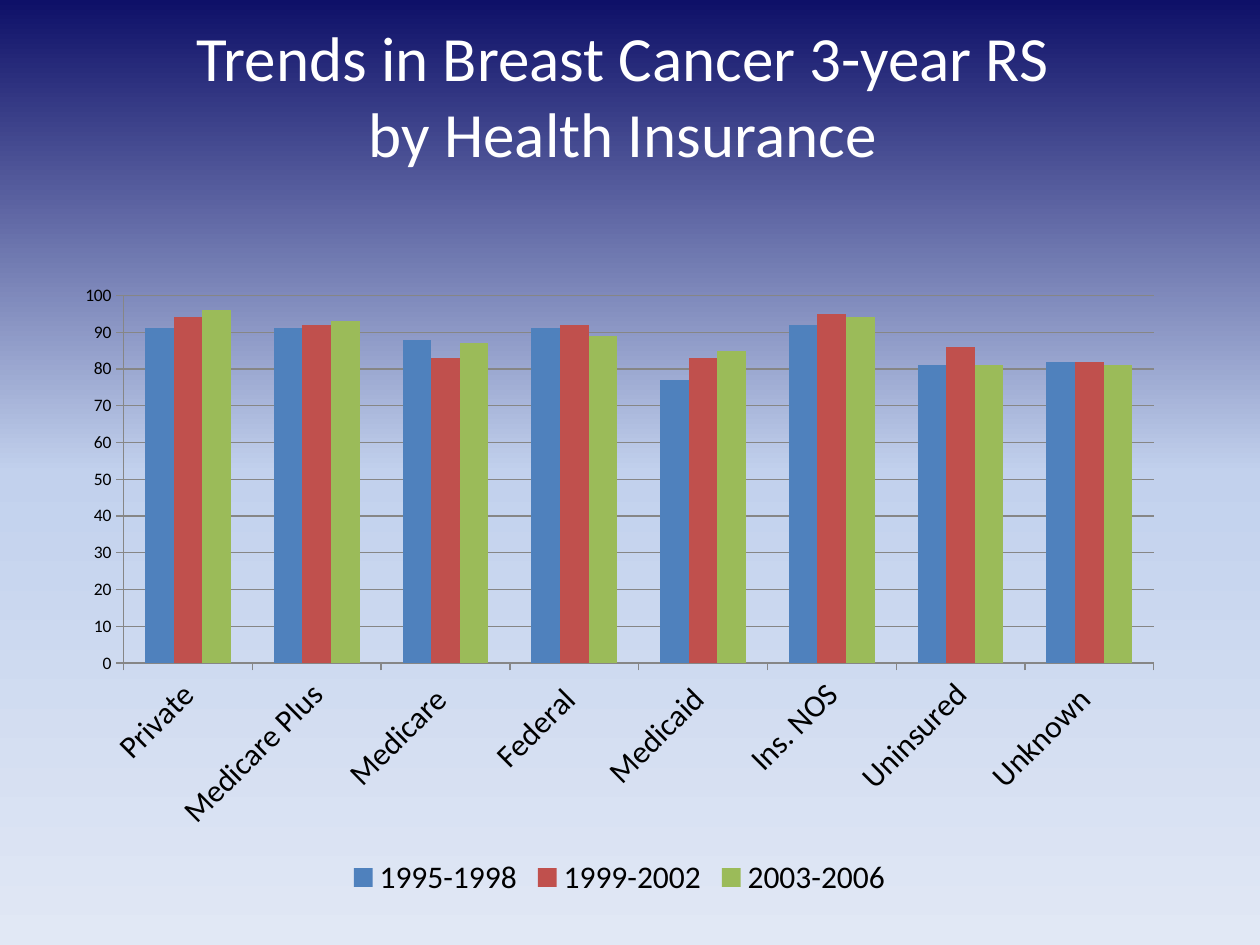
"""Build a slide charting breast cancer survival trends by health insurance."""
from copy import deepcopy

from pptx import Presentation
from pptx.chart.data import CategoryChartData as ChartData
from pptx.dml.color import RGBColor
from pptx.enum.chart import XL_CHART_TYPE as ChartType
from pptx.enum.chart import XL_LEGEND_POSITION as LegendPosition
from pptx.enum.chart import XL_TICK_MARK as TickMark
from pptx.enum.text import MSO_ANCHOR as Anchor
from pptx.enum.text import PP_ALIGN as Align
from pptx.util import Pt

WHITE = RGBColor(0xFF, 0xFF, 0xFF)
BLACK = RGBColor(0x00, 0x00, 0x00)
GRAY = RGBColor(0x86, 0x86, 0x86)
NAVY = RGBColor(0x0E, 0x10, 0x68)
SKY = RGBColor(0xC2, 0xD1, 0xED)
PALE = RGBColor(0xE1, 0xE8, 0xF5)
BLUE = RGBColor(0x4F, 0x81, 0xBD)
RED = RGBColor(0xC0, 0x50, 0x4D)
GREEN = RGBColor(0x9B, 0xBB, 0x59)

FONT = "Calibri"
WIDTH, HEIGHT = 720, 540
TITLE = ["Trends in Breast Cancer 3-year RS ", "by Health Insurance "]
BACKGROUND = [(0, NAVY), (0.5, SKY), (1, PALE)]
INSURANCE = ["Private", "Medicare Plus", "Medicare ", "Federal ",
             "Medicaid ", "Ins. NOS", "Uninsured", "Unknown "]
PERIODS = [
    ("1995-1998", BLUE, [91, 91, 88, 91, 77, 92, 81, 82]),
    ("1999-2002", RED, [94, 92, 83, 92, 83, 95, 86, 82]),
    ("2003-2006", GREEN, [96, 93, 87, 89, 85, 94, 81, 81]),
]


def style_font(font, size, color):
    font.name = FONT
    font.size = Pt(size)
    font.color.rgb = color


def paint_background(page):
    fill = page.background.fill
    fill.gradient()
    fill.gradient_angle = 270
    first = page.element.xpath(".//a:gs")[0]
    first.addnext(deepcopy(first))
    for stop, (position, color) in zip(fill.gradient_stops, BACKGROUND):
        stop.position = position
        stop.color.rgb = color


def add_title(page):
    box = page.shapes.add_textbox(0, 0, Pt(WIDTH), Pt(108))
    frame = box.text_frame
    frame.word_wrap = True
    frame.vertical_anchor = Anchor.MIDDLE
    para = frame.paragraphs[0]
    para.alignment = Align.CENTER
    for index, line in enumerate(TITLE):
        if index:
            para.add_line_break()
        span = para.add_run()
        span.text = line
        style_font(span.font, 36, WHITE)


def style_axis(axis, size):
    axis.major_tick_mark = TickMark.OUTSIDE
    axis.minor_tick_mark = TickMark.NONE
    axis.format.line.color.rgb = GRAY
    axis.format.line.width = Pt(0.75)
    style_font(axis.tick_labels.font, size, BLACK)


def add_survival_chart(page):
    data = ChartData()
    data.categories = INSURANCE
    for name, color, values in PERIODS:
        data.add_series(name, values)
    chart = page.shapes.add_chart(ChartType.COLUMN_CLUSTERED, Pt(36), Pt(156),
                                  Pt(636), Pt(360), data).chart
    chart.has_title = False
    style_font(chart.font, 10, BLACK)

    plot = chart.plots[0]
    plot.gap_width = 150
    plot.overlap = 0
    plot.vary_by_categories = False
    for series, (name, color, values) in zip(plot.series, PERIODS):
        series.format.fill.solid()
        series.format.fill.fore_color.rgb = color

    style_axis(chart.category_axis, 18)
    label_body = chart.category_axis._element.xpath("./c:txPr/a:bodyPr")[0]
    label_body.set("rot", "-2700000")

    scale = chart.value_axis
    style_axis(scale, 10)
    scale.minimum_scale, scale.maximum_scale, scale.major_unit = 0, 100, 10
    scale.has_major_gridlines = True
    scale.major_gridlines.format.line.color.rgb = GRAY
    scale.major_gridlines.format.line.width = Pt(0.75)

    chart.has_legend = True
    chart.legend.position = LegendPosition.BOTTOM
    chart.legend.include_in_layout = False
    style_font(chart.legend.font, 18, BLACK)


def main():
    deck = Presentation()
    deck.slide_width, deck.slide_height = Pt(WIDTH), Pt(HEIGHT)
    page = deck.slides.add_slide(deck.slide_layouts[6])
    paint_background(page)
    add_title(page)
    add_survival_chart(page)
    deck.save("out.pptx")


if __name__ == "__main__":
    main()
